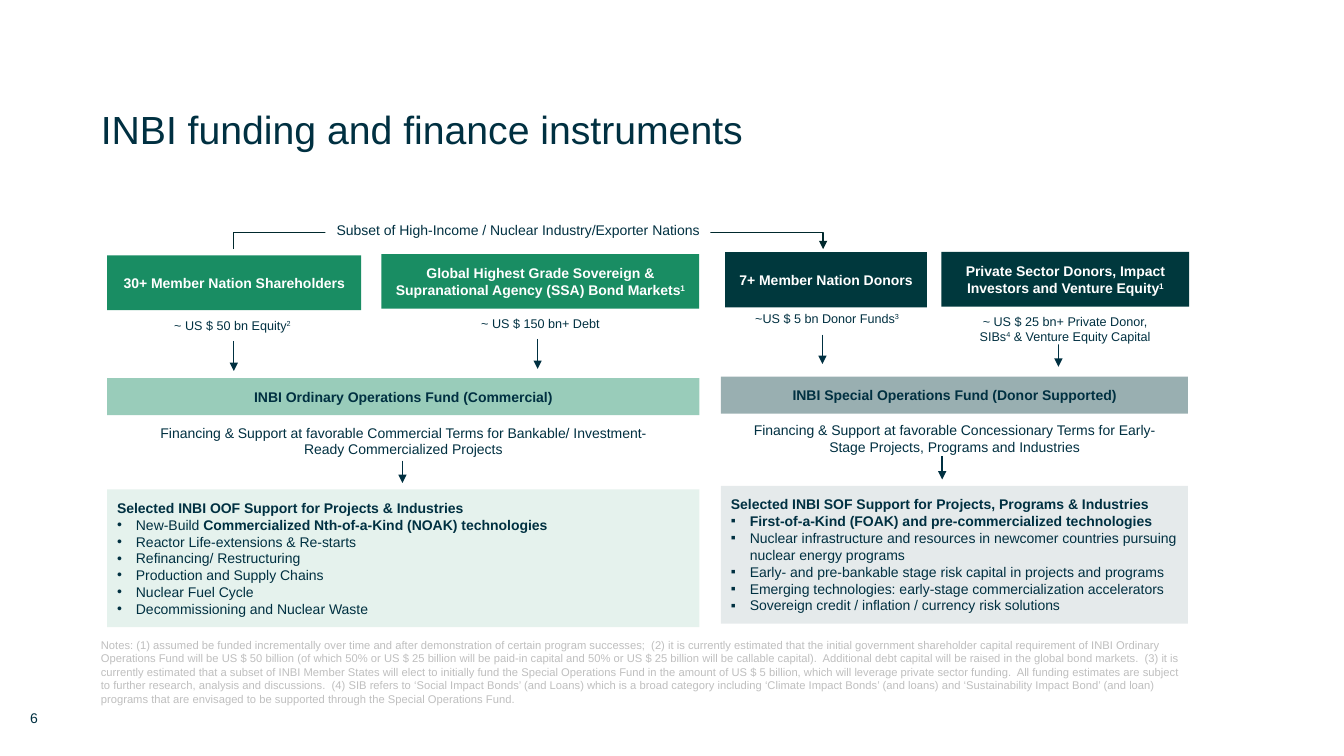
from lxml.etree import SubElement
from pptx import Presentation
from pptx.dml.color import RGBColor as RGB
from pptx.enum.shapes import MSO_CONNECTOR as CONN, MSO_SHAPE as SHAPE
from pptx.enum.text import MSO_ANCHOR as ANCHOR, PP_ALIGN as ALIGN
from pptx.oxml.ns import qn
from pptx.util import Pt

C = {"ink": "003041", "green": "008153", "teal": "00383D", "white": "FFFFFF",
     "grey": "BFBFBF", "bracket": "00292D"}

prs = Presentation()
prs.slide_width, prs.slide_height = Pt(960), Pt(540)
s = prs.slides.add_slide(prs.slide_layouts[6])


def add_text(text, x, y, w, h, size=10, color="ink", bold=False, align=ALIGN.CENTER,
             anchor=ANCHOR.TOP, inset=0, shape=None, fill=None, alpha=100,
             bullet=None, wrap=True, spacing=None):
    box = Pt(x), Pt(y), Pt(w), Pt(h)
    if shape:
        sp = s.shapes.add_shape(shape, *box)
        sp.shadow.inherit = False
        sp.line.fill.background()
        sp.fill.solid()
        sp.fill.fore_color.rgb = RGB.from_string(C[fill])
        if alpha < 100:
            clr = sp._element.spPr.find(qn("a:solidFill"))[0]
            SubElement(clr, qn("a:alpha"), val=str(alpha * 1000))
        if shape == SHAPE.ROUNDED_RECTANGLE:
            sp.adjustments[0] = 0
    else:
        sp = s.shapes.add_textbox(*box)
    tf = sp.text_frame
    tf.word_wrap = wrap
    tf.vertical_anchor = anchor
    tf.margin_left = tf.margin_right = tf.margin_top = tf.margin_bottom = Pt(inset)
    for i, line in enumerate(text.split("\n")):
        p = tf.paragraphs[0] if i == 0 else tf.add_paragraph()
        p.alignment = align
        if spacing:
            p.line_spacing = spacing
        if bullet and i:
            pPr = p._p.get_or_add_pPr()
            pPr.set("marL", str(Pt(13.5)))
            pPr.set("indent", str(-Pt(13.5)))
            SubElement(pPr, qn("a:buFont"), typeface="Arial")
            SubElement(pPr, qn("a:buChar"), char=bullet)
        for j, strong in enumerate(line.split("*")):
            for k, piece in enumerate(strong.split("^")):
                for n, part in enumerate(piece.split("\v")):
                    if n:
                        p.add_line_break()
                    if not part:
                        continue
                    r = p.add_run()
                    r.text = part
                    r.font.name, r.font.size = "Arial", Pt(size)
                    r.font.bold = bold or j % 2 == 1
                    r.font.color.rgb = RGB.from_string(C[color])
                    if k % 2:
                        r.font._element.set("baseline", "30000")


def add_arrowhead(sp, color):
    sp.line.color.rgb = RGB.from_string(C[color])
    sp.line.width = Pt(1)
    SubElement(sp._element.spPr.find(qn("a:ln")), qn("a:tailEnd"), type="triangle")
    SubElement(sp._element.spPr, qn("a:effectLst"))


add_text("INBI funding and finance instruments", 72, 72, 720, 36, size=28,
         align=ALIGN.LEFT, spacing=1.1)

notes = [
    "Notes: (1) assumed be funded incrementally over time and after demonstration of certain "
    "program successes;",
    "(2) it is currently estimated that the initial government shareholder "
    "capital requirement of INBI Ordinary Operations Fund will be US $ 50 billion (of which 50% "
    "or US $ 25 billion will be paid-in capital and 50% or US $ 25 billion will be callable "
    "capital).",
    "Additional debt capital will be raised in the global bond markets.",
    "(3) it is currently estimated that a subset of INBI Member States will elect to initially "
    "fund the Special Operations Fund in the amount of US $ 5 billion, which will leverage "
    "private sector funding.",
    "All funding estimates are subject to further research, analysis and discussions.",
    "(4) SIB refers to ‘Social Impact Bonds’ (and Loans) which is a broad category including "
    "‘Climate Impact Bonds’ (and loans) and ‘Sustainability Impact Bond’ (and loan) programs "
    "that are envisaged to be supported through the Special Operations Fund.",
]
add_text("  ".join(notes), 72, 456, 780, 49.5, size=8, color="grey", align=ALIGN.LEFT)

boxes = [
    ("30+ Member Nation Shareholders", 76.5, 182.5, 181.5, 39, "green", 90, "white"),
    ("Global Highest Grade Sovereign & Supranational Agency (SSA) Bond Markets^1^",
     272.5, 181.5, 227, 39, "green", 90, "white"),
    ("7+ Member Nation Donors", 518, 180, 144, 39.5, "teal", 100, "white"),
    ("Private Sector Donors, Impact Investors and Venture Equity^1^",
     672.5, 180, 177, 39, "teal", 100, "white"),
    ("INBI Ordinary Operations Fund (Commercial)", 76.5, 270, 423, 26.5, "green", 40, "ink"),
    ("INBI Special Operations Fund (Donor Supported)", 515, 269, 333.5, 26.5, "teal", 40, "ink"),
]
for text, x, y, w, h, fill, alpha, color in boxes:
    add_text(text, x, y, w, h, color=color, bold=True, anchor=ANCHOR.MIDDLE, inset=7.2,
             shape=SHAPE.ROUNDED_RECTANGLE, fill=fill, alpha=alpha)

bracket = s.shapes.build_freeform(167, 178.5, scale=12700)
bracket.add_line_segments([(167, 166.5), (587.5, 166.5), (587.5, 178)], close=False)
sp = bracket.convert_to_shape()
sp.fill.background()
add_arrowhead(sp, "bracket")
add_text("Subset of High-Income / Nuclear Industry/Exporter Nations", 232.5, 158.5, 275, 12,
         shape=SHAPE.RECTANGLE, fill="white")

for text, x, y, w in [(" ~ US $ 50 bn Equity^2^", 108.5, 227, 112.5),
                      ("~ US $ 150 bn+ Debt", 327, 225.5, 118),
                      (" ~US $ 5 bn Donor Funds^3^", 530.5, 222, 118)]:
    add_text(text, x, y, w, 11, size=9)

arrows = [(167, 243.5, 265), (384, 242, 263.5), (587.5, 239, 260), (756, 240.5, 262),
          (287.5, 329, 345), (673, 326, 342.5)]
for x, top, bottom in arrows:
    sp = s.shapes.add_connector(CONN.STRAIGHT, Pt(x), Pt(top), Pt(x), Pt(bottom))
    add_arrowhead(sp, "ink")

add_text("~ US $ 25 bn+ Private Donor, SIBs^4^ & Venture Equity Capital", 698.5, 224, 124.5, 22,
         size=9, shape=SHAPE.RECTANGLE, fill="white")
add_text("Financing & Support at favorable Commercial Terms for Bankable/ Investment-\v"
         "Ready Commercialized Projects", 76.5, 303, 423, 24)
add_text("Financing & Support at favorable Concessionary Terms for Early-\v"
         "Stage Projects, Programs and Industries", 515, 301, 333.5, 24)

ordinary = """*Selected INBI OOF Support for Projects & Industries*
New-Build *Commercialized Nth-of-a-Kind (NOAK) technologies*
Reactor Life-extensions & Re-starts
Refinancing/ Restructuring
Production and Supply Chains
Nuclear Fuel Cycle
Decommissioning and Nuclear Waste"""
special = """*Selected INBI SOF Support for Projects, Programs & Industries*
*First-of-a-Kind (FOAK) and pre-commercialized technologies*
Nuclear infrastructure and resources in newcomer countries pursuing nuclear energy programs
Early- and pre-bankable stage risk capital in projects and programs
Emerging technologies: early-stage commercialization accelerators
Sovereign credit / inflation / currency risk solutions"""
for text, x, y, w, fill, bullet in [(ordinary, 76.5, 349.5, 423, "green", "•"),
                                    (special, 515, 347, 333.5, "teal", "▪")]:
    add_text(text, x, y, w, 98.5, align=ALIGN.LEFT, inset=7.2, shape=SHAPE.RECTANGLE,
             fill=fill, alpha=10, bullet=bullet)

add_text("6", 21.5, 507, 10, 12, align=ALIGN.LEFT, anchor=ANCHOR.MIDDLE, wrap=False)

prs.save("out.pptx")
